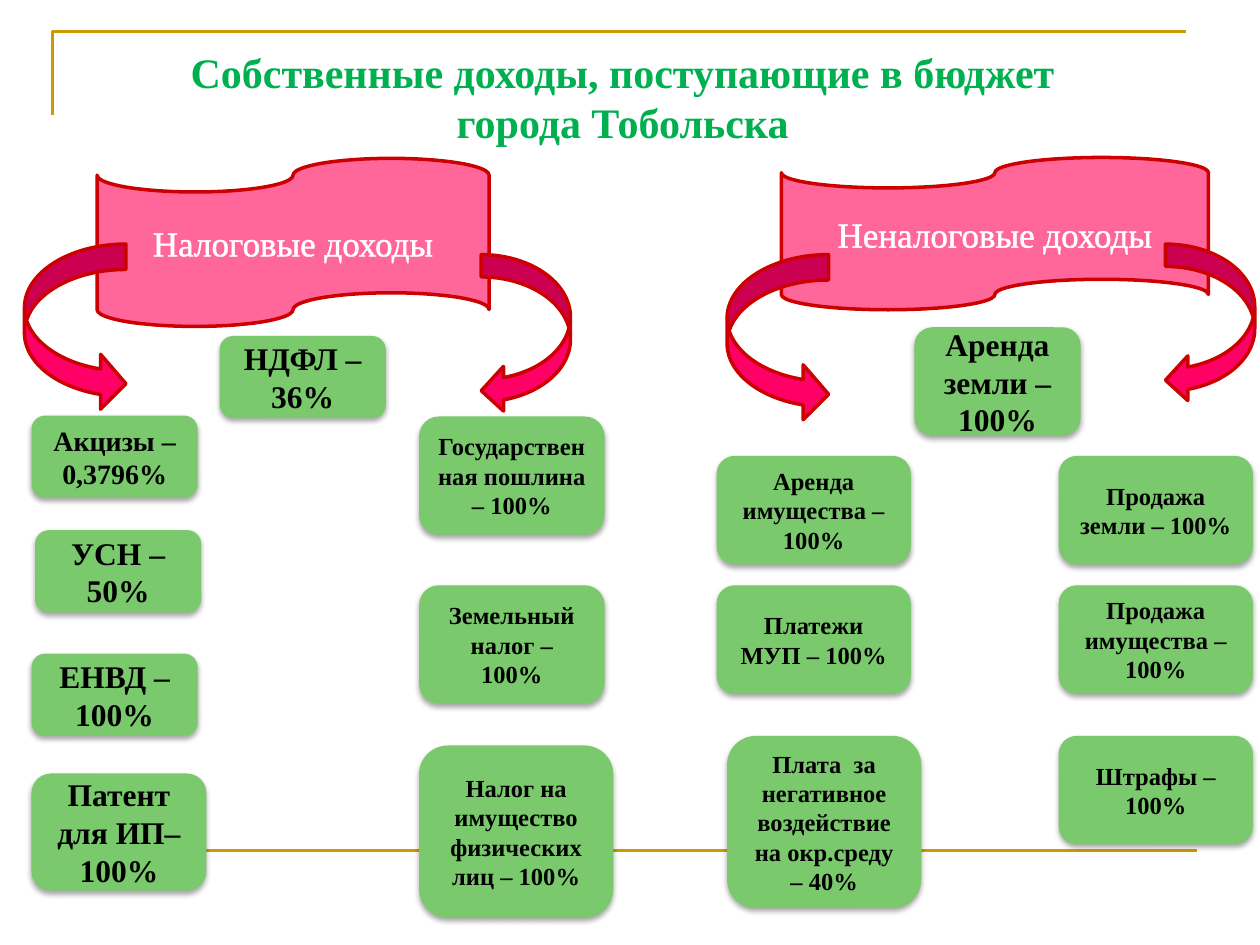
"""Build a slide on the own revenues of a city budget."""
import pptx
import pptx.dml.color
import pptx.enum.shapes
import pptx.enum.text
import pptx.oxml
import pptx.oxml.ns
import pptx.util

Pt = pptx.util.Pt
RGB = pptx.dml.color.RGBColor
SHAPE = pptx.enum.shapes.MSO_SHAPE
ANCHOR = pptx.enum.text.MSO_ANCHOR
CENTER = pptx.enum.text.PP_ALIGN.CENTER

GOLD = RGB(0xCC, 0x99, 0x00)
GREEN = RGB(0x00, 0xB0, 0x50)
CARD_GREEN = RGB(0x7A, 0xC9, 0x6C)
PINK = RGB(0xFF, 0x66, 0x99)
HOT_PINK = RGB(0xFF, 0x00, 0x66)
RED = RGB(0xCC, 0x00, 0x00)
WHITE = RGB(0xFF, 0xFF, 0xFF)
BLACK = RGB(0, 0, 0)

NS = 'xmlns:a="http://schemas.openxmlformats.org/drawingml/2006/main"'
CARD_SHADOW = (f'<a:outerShdw {NS} blurRad="40000" dist="23000" dir="5400000" rotWithShape="0">'
               '<a:srgbClr val="000000"><a:alpha val="35000"/></a:srgbClr></a:outerShdw>')
LETTER_OUTLINE = (f'<a:ln {NS} w="18415"><a:solidFill><a:srgbClr val="{WHITE}"/></a:solidFill>'
                  '<a:prstDash val="solid"/></a:ln>')

TITLE = "Собственные доходы, поступающие в бюджет города Тобольска"
TITLE_BOX = (65.5, 23, 580.5, 55)
BRACKET = [(30, 66), (30, 18), (678, 18)]
FOOT_LINE = (36, 486, 684, 486)

BANNERS = [
    ("Налоговые доходы", (55.5, 90.5, 224, 96)),
    ("Неналоговые доходы", (446.5, 90, 244, 87)),
]

LEFT_ARROW = (SHAPE.CURVED_LEFT_ARROW, (51, 90.5), ())
RIGHT_ARROW = (SHAPE.CURVED_RIGHT_ARROW, (58, 95.5), (0.25, 0.541, 0.25))
ARROWS = [
    (LEFT_ARROW, (275, 145.5)),
    (RIGHT_ARROW, (14, 139.5)),
    (LEFT_ARROW, (666, 139.5)),
    (RIGHT_ARROW, (415.5, 145.5)),
]

SMALL, PATENT, LAND = (95, 47), (100, 67), (95, 62)
LOCAL, WIDE, TALL = (106, 67.5), (111, 62), (111, 98.5)
CARDS = [
    ("НДФЛ – 36%", 18, SMALL, (125.5, 192)),
    ("Акцизы – 0,3796%", 16, SMALL, (18, 237.5)),
    ("УСН – 50%", 18, SMALL, (20, 303)),
    ("ЕНВД – 100%", 18, SMALL, (18, 373.5)),
    ("Патент для ИП– 100%", 18, PATENT, (18, 442)),
    ("Государственная пошлина – 100%", 14, LOCAL, (239.5, 238)),
    ("Земельный налог – 100%", 14, LOCAL, (239.5, 334.5)),
    ("Налог на имущество физических лиц – 100%", 14, TALL, (239.5, 426)),
    ("Аренда земли – 100%", 18, LAND, (522.5, 187)),
    ("Аренда имущества – 100%", 14, WIDE, (409.5, 260.5)),
    ("Платежи МУП – 100%", 14, WIDE, (409.5, 334.5)),
    ("Плата  за негативное воздействие на окр.среду – 40%", 14, TALL, (415.5, 420.5)),
    ("Продажа земли – 100%", 14, WIDE, (605, 260.5)),
    ("Продажа имущества – 100%", 14, WIDE, (605, 334.5)),
    ("Штрафы – 100%", 14, WIDE, (605, 420.5)),
]


def points(values):
    return [Pt(value) for value in values]


def write(shape, text, size, color, bold, anchor=ANCHOR.MIDDLE):
    frame = shape.text_frame
    frame.word_wrap = True
    frame.vertical_anchor = anchor
    paragraph = frame.paragraphs[0]
    paragraph.alignment = CENTER
    run = paragraph.add_run()
    run.text = text
    run.font.color.rgb = color
    for name, value in {"name": "Times New Roman", "size": Pt(size), "bold": bold}.items():
        setattr(run.font, name, value)
    return run


def outline(shape, color, width):
    shape.line.color.rgb = color
    shape.line.width = Pt(width)


def add_figure(slide, kind, box, fill):
    figure = slide.shapes.add_shape(kind, *points(box))
    figure.shadow.inherit = False
    figure.fill.solid()
    figure.fill.fore_color.rgb = fill
    return figure


def add_frame(slide):
    start, *corners = [points(corner) for corner in BRACKET]
    builder = slide.shapes.build_freeform(*start)
    builder.add_line_segments(corners, close=False)
    bracket = builder.convert_to_shape()
    bracket.fill.background()
    bracket.shadow.inherit = False
    foot = slide.shapes.add_connector(
        pptx.enum.shapes.MSO_CONNECTOR.STRAIGHT, *points(FOOT_LINE))
    for part in (bracket, foot):
        outline(part, GOLD, 1.5)
    foot._element.spPr.append(pptx.oxml.parse_xml(f"<a:effectLst {NS}/>"))


def main():
    deck = pptx.Presentation()
    deck.slide_width, deck.slide_height = Pt(720), Pt(540)
    slide = deck.slides.add_slide(deck.slide_layouts[6])
    add_frame(slide)
    title = slide.shapes.add_textbox(*points(TITLE_BOX))
    write(title, TITLE, 24, GREEN, True, ANCHOR.TOP)
    for text, box in BANNERS:
        banner = add_figure(slide, SHAPE.FLOWCHART_PUNCHED_TAPE, box, PINK)
        outline(banner, RED, 2)
        run = write(banner, text, 20, WHITE, False)
        run.font._element.insert(0, pptx.oxml.parse_xml(LETTER_OUTLINE))
    for (kind, size, bends), corner in ARROWS:
        arrow = add_figure(slide, kind, corner + size, HOT_PINK)
        outline(arrow, RED, 2)
        for index, bend in enumerate(bends):
            arrow.adjustments[index] = bend
    for text, font_size, size, corner in CARDS:
        card = add_figure(slide, SHAPE.ROUNDED_RECTANGLE, corner + size, CARD_GREEN)
        card.line.fill.background()
        effects = card._element.spPr.find(pptx.oxml.ns.qn("a:effectLst"))
        effects.append(pptx.oxml.parse_xml(CARD_SHADOW))
        write(card, text, font_size, BLACK, True)
    deck.save("out.pptx")


if __name__ == "__main__":
    main()
